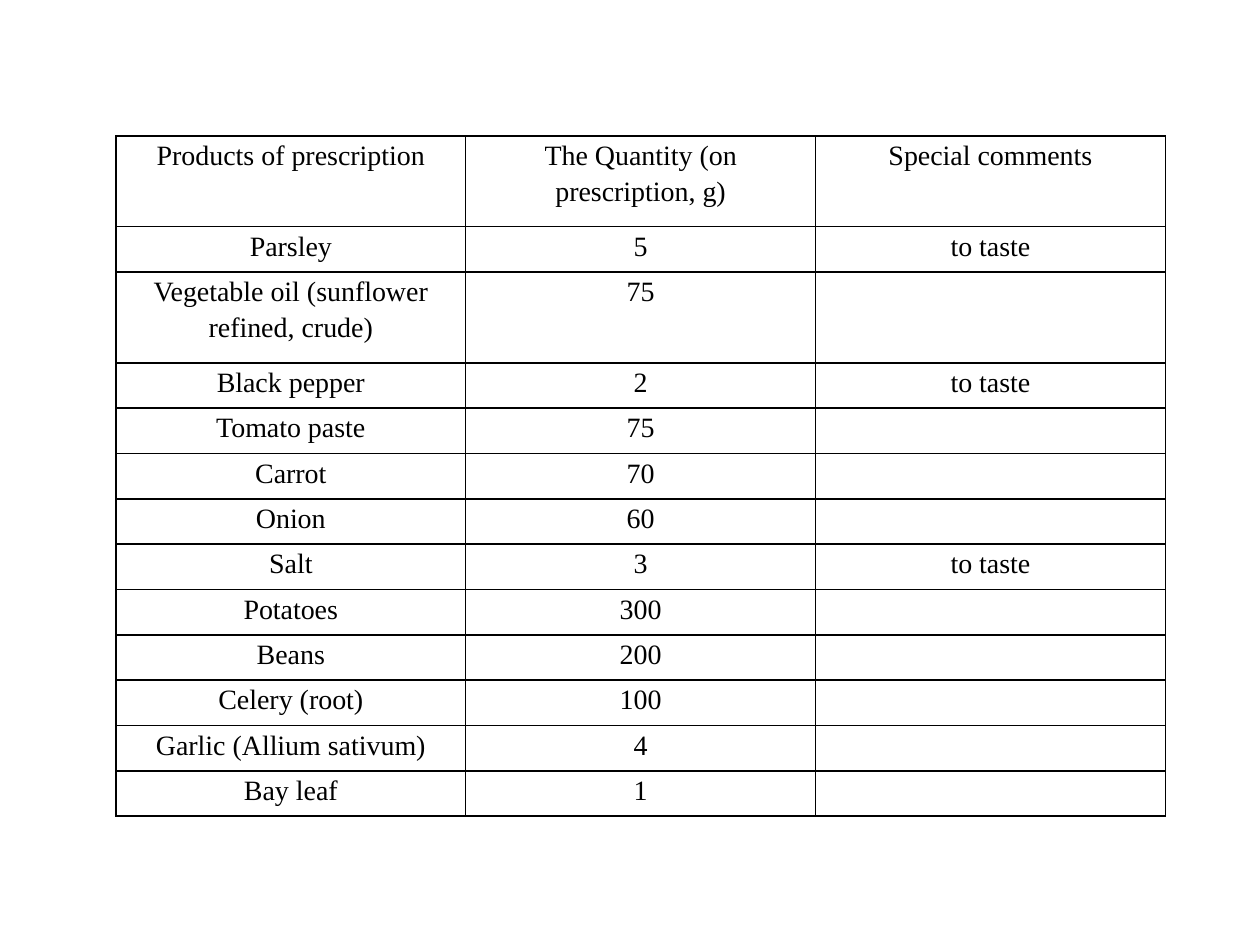
from dataclasses import dataclass

from lxml import etree
from pptx import Presentation
from pptx import util as u
from pptx.dml.color import RGBColor
from pptx.enum import text
from pptx.oxml.ns import qn


@dataclass(frozen=True)
class Theme:
    font: str = "Times New Roman"
    size: u.Pt = u.Pt(16)
    ink: RGBColor = RGBColor(0, 0, 0)
    rule: u.Pt = u.Pt(1)
    lead: float = 1.15


@dataclass(frozen=True)
class Item:
    name: str
    grams: str
    note: str = ""
    lines: int = 1


THEME = Theme()
LEFT, TOP = u.Inches(0.92), u.Inches(1.08)
WIDTH, LINE = u.Inches(8.33), u.Inches(0.36)
PAD = u.Inches(0.09)
TASTE = "to taste"
ITEMS = [
    Item("Products of prescription", "The Quantity (on prescription, g)",
         "Special comments", lines=2),
    Item("Parsley", "5", TASTE),
    Item("Vegetable oil (sunflower refined, crude)", "75", lines=2),
    Item("Black pepper", "2", TASTE),
    Item("Tomato paste", "75"),
    Item("Carrot", "70"),
    Item("Onion", "60"),
    Item("Salt", "3", TASTE),
    Item("Potatoes", "300"),
    Item("Beans", "200"),
    Item("Celery (root)", "100"),
    Item("Garlic (Allium sativum)", "4"),
    Item("Bay leaf", "1"),
]


def frame(cell) -> None:
    """Rule all four sides; borders must come before the fill in tcPr."""
    props = cell._tc.get_or_add_tcPr()
    for spot, side in enumerate(("lnL", "lnR", "lnT", "lnB")):
        line = etree.Element(qn(f"a:{side}"), w=str(THEME.rule))
        fill = etree.SubElement(line, qn("a:solidFill"))
        etree.SubElement(fill, qn("a:srgbClr"), val=str(THEME.ink))
        props.insert(spot, line)


def write(cell, words: str) -> None:
    cell.margin_left = cell.margin_right = PAD
    cell.margin_top = cell.margin_bottom = 0
    cell.fill.background()
    frame(cell)
    cell.text_frame.text = words
    para = cell.text_frame.paragraphs[0]
    para.alignment = text.PP_ALIGN.CENTER
    para.line_spacing = THEME.lead
    para.font.size = THEME.size
    for run in para.runs:
        run.font.name = THEME.font
        run.font.size = THEME.size
        run.font.bold = False
        run.font.color.rgb = THEME.ink


def draw(slide, items: list[Item]) -> None:
    high = LINE * sum(item.lines for item in items)
    table = slide.shapes.add_table(len(items), 3, LEFT, TOP, WIDTH, high).table
    table.first_row = table.horz_banding = False
    for row, item in zip(table.rows, items):
        row.height = LINE * item.lines
        for cell, words in zip(row.cells, (item.name, item.grams, item.note)):
            write(cell, words)


def main() -> None:
    deck = Presentation()
    deck.slide_width, deck.slide_height = u.Inches(10), u.Inches(7.5)
    blank = deck.slide_layouts[6]
    draw(deck.slides.add_slide(blank), ITEMS)
    deck.save("out.pptx")


if __name__ == "__main__":
    main()
